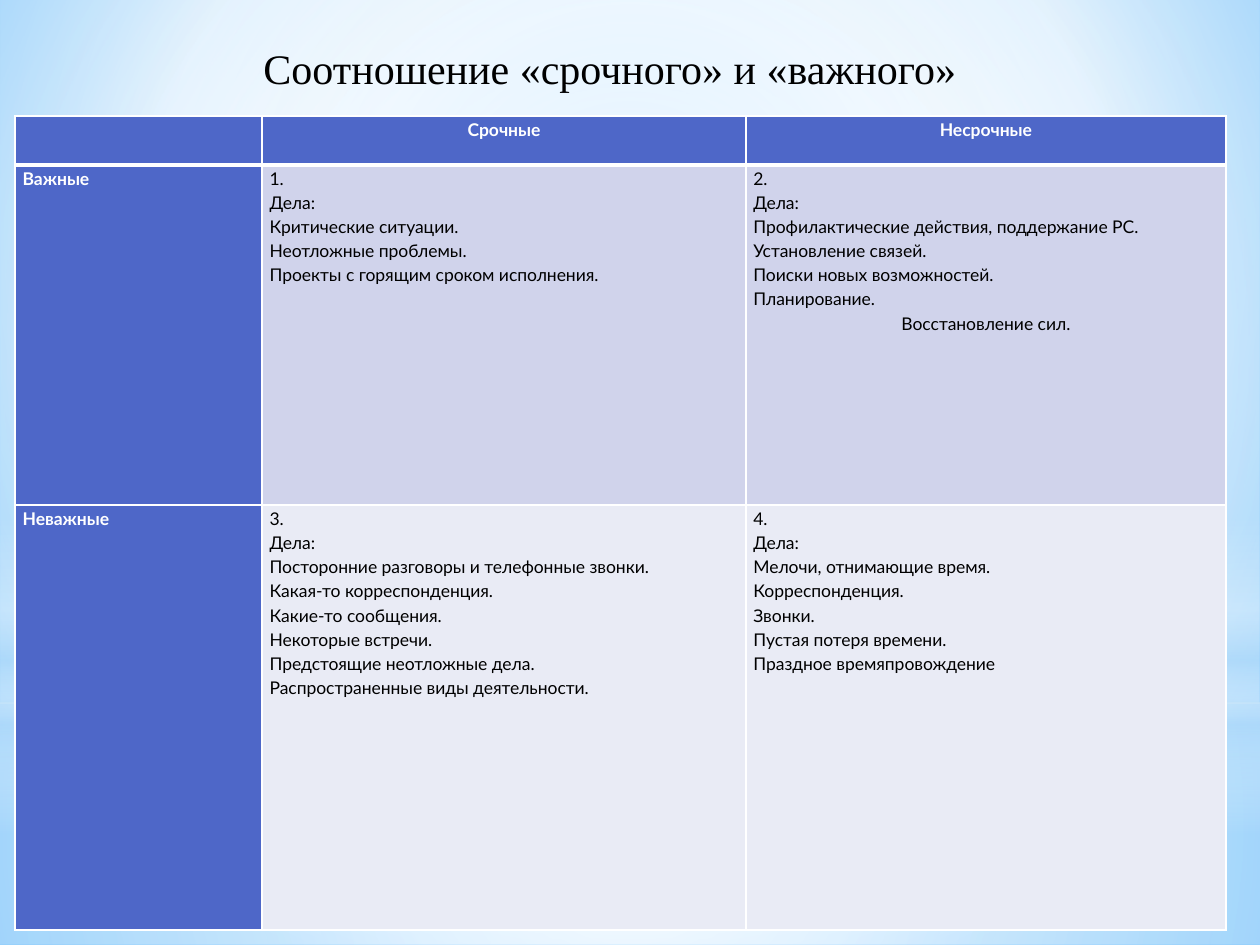
"""Build a slide with the matrix of urgent and important matters."""
from lxml import etree
from pptx import Presentation
from pptx.dml.color import RGBColor
from pptx.enum.shapes import MSO_SHAPE
from pptx.enum.text import MSO_AUTO_SIZE, PP_ALIGN
from pptx.oxml.ns import qn
from pptx.util import Inches, Pt

RECTANGLE, OVAL = MSO_SHAPE.RECTANGLE, MSO_SHAPE.OVAL
LEFT, CENTER = PP_ALIGN.LEFT, PP_ALIGN.CENTER
FIT_SHAPE = MSO_AUTO_SIZE.SHAPE_TO_FIT_TEXT

WHITE, BLACK, PALE, ACCENT = "FFFFFF", "000000", "B4DCFA", "4E67C8"
ROW_FILLS = (ACCENT, "D0D3EB", "E9EBF5")
MIDDLE = (50, 50, 50, 50)
COLUMNS = (1.96, 3.84, 3.81)
ROWS = (0.39, 2.7, 3.37)
CENTERED = ("Срочные", "Несрочные", "Восстановление сил.")
MATTERS = (
    ("", "Срочные", "Несрочные"),
    (
        "Важные",
        "1.\nДела:\nКритические ситуации.\nНеотложные проблемы.\n"
        "Проекты с горящим сроком исполнения.",
        "2.\nДела:\nПрофилактические действия, поддержание РС.\n"
        "Установление связей.\nПоиски новых возможностей.\n"
        "Планирование.\nВосстановление сил.",
    ),
    (
        "Неважные",
        "3.\nДела:\nПосторонние разговоры и телефонные звонки.\n"
        "Какая-то корреспонденция.\nКакие-то сообщения.\nНекоторые встречи.\n"
        "Предстоящие неотложные дела.\nРаспространенные виды деятельности.",
        "4.\nДела:\nМелочи, отнимающие время.\nКорреспонденция.\nЗвонки.\n"
        "Пустая потеря времени.\nПраздное времяпровождение",
    ),
)


def color(value):
    return RGBColor.from_string(value)


def add_child(parent, tag, **attributes):
    child = etree.SubElement(parent, qn(tag))
    for name, value in attributes.items():
        child.set(name, str(value))
    return child


def set_gradient(fill, parent, stops, center=None, angle=0):
    fill.solid()
    solid = parent.find(qn("a:solidFill"))
    gradient = etree.Element(qn("a:gradFill"), rotWithShape="1")
    stop_list = add_child(gradient, "a:gsLst")
    for position, value, opacity in stops:
        stop = add_child(stop_list, "a:gs", pos=position * 1000)
        tint = add_child(stop, "a:srgbClr", val=value)
        if opacity < 100:
            add_child(tint, "a:alpha", val=opacity * 1000)
    if center:
        shade = add_child(gradient, "a:path", path="circle")
        sides = {side: share * 1000 for side, share in zip("ltrb", center)}
        add_child(shade, "a:fillToRect", **sides)
    else:
        add_child(gradient, "a:lin", ang=angle * 60000, scaled=0)
    parent.replace(solid, gradient)


def set_borders(cell, **widths):
    properties = cell._tc.get_or_add_tcPr()
    for side in "LRTB":
        width = Pt(widths.get(side, 1))
        line = add_child(properties, f"a:ln{side}", w=width)
        add_child(add_child(line, "a:solidFill"), "a:srgbClr", val=WHITE)


def write(frame, text, font="Lato", size=10, ink=BLACK, bold=False, align=LEFT, spacing=None):
    for number, line in enumerate(text.split("\n")):
        para = frame.add_paragraph() if number else frame.paragraphs[0]
        para.alignment = CENTER if line in CENTERED else align
        para.line_spacing = spacing
        span = para.add_run()
        span.text = line
        span.font.name, span.font.size, span.font.bold = font, Pt(size), bold
        span.font.color.rgb = color(ink)


class SlideBuilder:
    """Holds the current slide and adds styled elements to it."""

    def __init__(self, page):
        self.page = page

    def background(self, stops, center):
        fill = self.page.background.fill
        fill.solid()
        parent = self.page.element.find(".//" + qn("p:bgPr"))
        set_gradient(fill, parent, stops, center)

    def glow(self, kind, top, height, stops, center=None, angle=0):
        shape = self.page.shapes.add_shape(
            kind, 0, Inches(top), Inches(10), Inches(height))
        shape.shadow.inherit = False
        shape.line.fill.background()
        set_gradient(shape.fill, shape._element.spPr, stops, center, angle)

    def title(self, text, left, top, width, height):
        box = self.page.shapes.add_textbox(
            Inches(left), Inches(top), Inches(width), Inches(height))
        box.text_frame.word_wrap = True
        box.text_frame.auto_size = FIT_SHAPE
        write(box.text_frame, text, font="Times New Roman", size=24, align=CENTER)

    def matrix(self, left, top):
        table = self.page.shapes.add_table(
            len(ROWS), len(COLUMNS), Inches(left), Inches(top),
            Inches(sum(COLUMNS)), Inches(sum(ROWS))).table
        table.first_row = table.horz_banding = False
        for column, width in zip(table.columns, COLUMNS):
            column.width = Inches(width)
        for row, height in zip(table.rows, ROWS):
            row.height = Inches(height)
        for row, texts in enumerate(MATTERS):
            for column, text in enumerate(texts):
                self.cell(table.cell(row, column), text, row, column)

    def cell(self, cell, text, row, column):
        heading = row == 0 or column == 0
        cell.margin_left = cell.margin_right = Inches(0.06)
        cell.margin_top = cell.margin_bottom = 0
        set_borders(cell, T=3 if row == 1 else 1, B=3 if row == 0 else 1)
        cell.fill.solid()
        cell.fill.fore_color.rgb = color(ACCENT if heading else ROW_FILLS[row])
        if text:
            write(cell.text_frame, text, ink=WHITE if heading else BLACK,
                  bold=heading, spacing=1.15)


def main():
    deck = Presentation()
    deck.slide_width, deck.slide_height = Inches(10), Inches(7.5)
    builder = SlideBuilder(deck.slides.add_slide(deck.slide_layouts[6]))
    builder.background(
        [(0, "9ED5FF", 100), (60, WHITE, 100), (100, "5BB9FF", 100)], (20, 10, 20, 60))
    builder.glow(RECTANGLE, 5.58, 1.92,
                 [(0, WHITE, 91), (37, WHITE, 76), (100, PALE, 79)], MIDDLE)
    builder.glow(RECTANGLE, 0, 5.58,
                 [(0, WHITE, 89), (48, WHITE, 62), (100, PALE, 79)], MIDDLE)
    builder.glow(RECTANGLE, 4.12, 2.5,
                 [(0, WHITE, 0), (29, WHITE, 30), (45, PALE, 40),
                  (55, WHITE, 26), (65, PALE, 60), (100, WHITE, 0)], angle=90)
    builder.glow(OVAL, 1.75, 5.58, [(0, WHITE, 100), (56, WHITE, 0)], MIDDLE)
    builder.matrix(0.12, 0.92)
    builder.title("Соотношение «срочного» и «важного»", 1.22, 0.29, 7.24, 0.5)
    deck.save("out.pptx")


if __name__ == "__main__":
    main()
